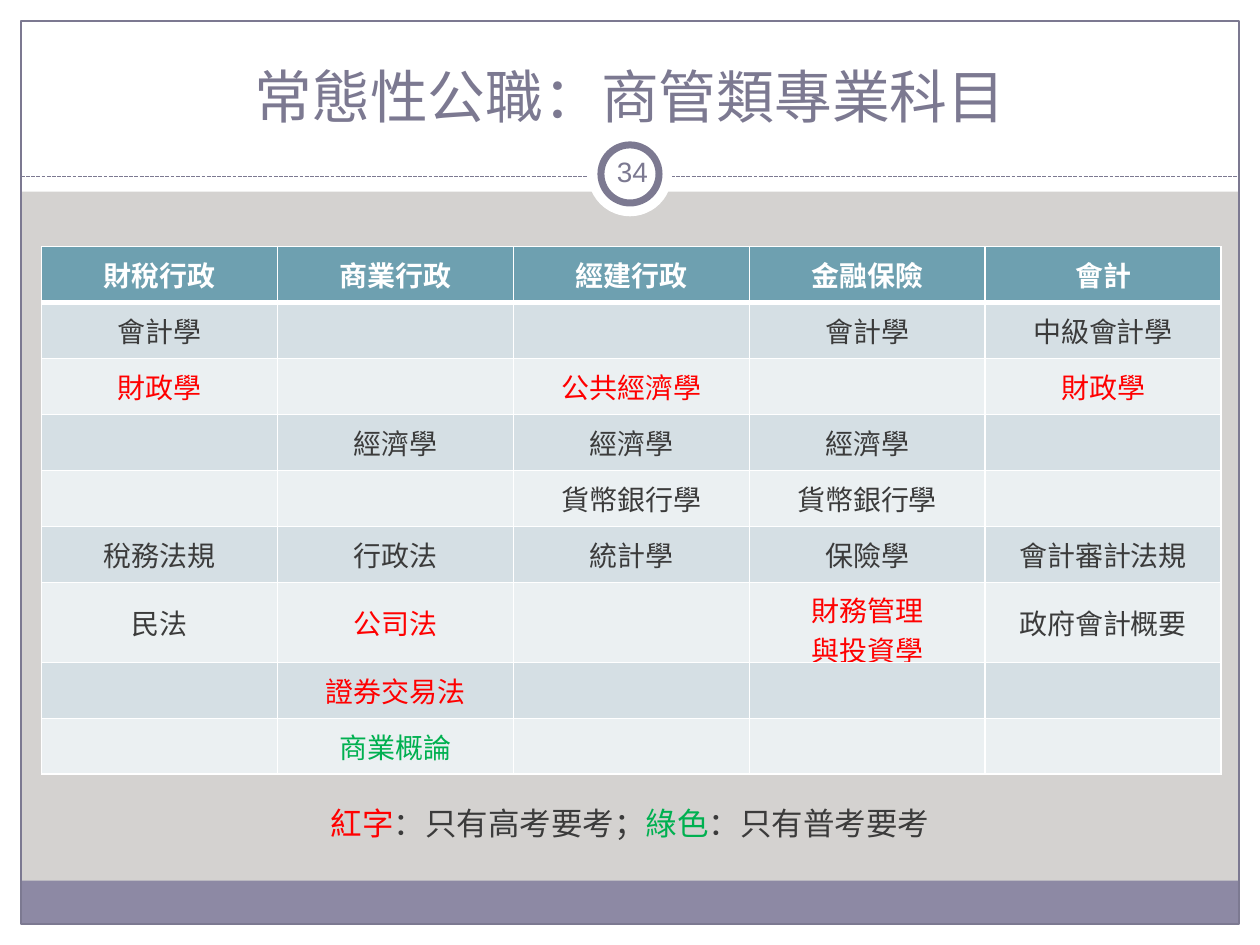
from lxml import etree
from pptx import Presentation
from pptx.dml.color import RGBColor
from pptx.enum.dml import MSO_LINE
from pptx.enum.shapes import MSO_CONNECTOR, MSO_SHAPE
from pptx.enum.text import MSO_ANCHOR, PP_ALIGN
from pptx.oxml.ns import qn
from pptx.util import Pt

RECT, OVAL = MSO_SHAPE.RECTANGLE, MSO_SHAPE.OVAL
LINE, DASH = MSO_CONNECTOR.STRAIGHT, MSO_LINE.SQUARE_DOT
TOP, MIDDLE, BOTTOM = MSO_ANCHOR.TOP, MSO_ANCHOR.MIDDLE, MSO_ANCHOR.BOTTOM
CENTER = PP_ALIGN.CENTER

WHITE = RGBColor(0xFF, 0xFF, 0xFF)
SAND = RGBColor(0xD4, 0xD2, 0xD0)
PURPLE = RGBColor(0x7C, 0x79, 0x91)
LILAC = RGBColor(0x8D, 0x89, 0xA4)
TEAL = RGBColor(0x6E, 0xA0, 0xB0)
MIST = RGBColor(0xD5, 0xDF, 0xE4)
PALE = RGBColor(0xEB, 0xF0, 0xF2)
GREY = RGBColor(0x3B, 0x3B, 0x3B)
RED = RGBColor(0xFF, 0x00, 0x00)
GREEN = RGBColor(0x00, 0xB0, 0x50)

FONT = "Arial"
WIDE, HIGH = 720, 540
EDGE = 12
RULE = 100.8
ROW, COL = 32, 134.8

ROWS = [
    ["財稅行政", "商業行政", "經建行政", "金融保險", "會計"],
    ["會計學", "", "", "會計學", "中級會計學"],
    ["財政學", "", "公共經濟學", "", "財政學"],
    ["", "經濟學", "經濟學", "經濟學", ""],
    ["", "", "貨幣銀行學", "貨幣銀行學", ""],
    ["稅務法規", "行政法", "統計學", "保險學", "會計審計法規"],
    ["民法", "公司法", "", "財務管理\n與投資學", "政府會計概要"],
    ["", "證券交易法", "", "", ""],
    ["", "商業概論", "", "", ""],
]
TINTS = {
    "財政學": RED,
    "公共經濟學": RED,
    "公司法": RED,
    "財務管理\n與投資學": RED,
    "證券交易法": RED,
    "商業概論": GREEN,
}
LEGEND = [
    ("紅字", RED),
    ("：只有高考要考；", GREY),
    ("綠色", GREEN),
    ("：只有普考要考", GREY),
]


def style(run, size, color, bold=False):
    font = run.font
    font.name = FONT
    font.size = Pt(size)
    font.bold = bold
    font.color.rgb = color


def add_block(slide, kind, box, fill=None, line=None, width=0.75):
    shape = slide.shapes.add_shape(kind, *map(Pt, box))
    shape.shadow.inherit = False
    if fill is None:
        shape.fill.background()
    else:
        shape.fill.solid()
        shape.fill.fore_color.rgb = fill
    if line is None:
        shape.line.fill.background()
    else:
        shape.line.color.rgb = line
        shape.line.width = Pt(width)


def add_rule(slide):
    rule = slide.shapes.add_connector(
        LINE, Pt(EDGE), Pt(RULE), Pt(WIDE - EDGE), Pt(RULE))
    rule.line.color.rgb = PURPLE
    rule.line.width = Pt(0.75)
    rule.line.dash_style = DASH
    etree.SubElement(rule._element.spPr, qn("a:effectLst"))


def add_text(slide, box, parts, size, anchor=TOP, wrap=True, inset=None):
    frame = slide.shapes.add_textbox(*map(Pt, box)).text_frame
    frame.word_wrap = wrap
    frame.vertical_anchor = anchor
    if inset is not None:
        frame.margin_left = frame.margin_right = Pt(inset)
        frame.margin_top = frame.margin_bottom = Pt(inset)
    para = frame.paragraphs[0]
    para.alignment = CENTER
    for text, color in parts:
        run = para.add_run()
        run.text = text
        style(run, size, color)


def add_border(cell, widths):
    props = cell._tc.get_or_add_tcPr()
    for spot, (side, width) in enumerate(widths.items()):
        line = etree.Element(qn("a:ln" + side), w=str(Pt(width)))
        fill = etree.SubElement(line, qn("a:solidFill"))
        etree.SubElement(fill, qn("a:srgbClr"), val=str(WHITE))
        props.insert(spot, line)


def fill_cell(cell, text, row):
    head = row == 0
    cell.fill.solid()
    cell.fill.fore_color.rgb = TEAL if head else (MIST if row % 2 else PALE)
    add_border(cell, {"L": 1, "R": 1, "T": 3 if row == 1 else 1,
                      "B": 3 if head else 1})
    cell.vertical_anchor = MIDDLE
    if not text:
        return
    cell.text_frame.text = text
    color = WHITE if head else TINTS.get(text, GREY)
    for para in cell.text_frame.paragraphs:
        para.alignment = CENTER
        for run in para.runs:
            style(run, 16, color, head)


def add_grid(slide):
    count = len(ROWS[0])
    table = slide.shapes.add_table(
        len(ROWS), count, Pt(23.8), Pt(141),
        Pt(COL * count), Pt(ROW * len(ROWS))).table
    for col in table.columns:
        col.width = Pt(COL)
    for r, words in enumerate(ROWS):
        table.rows[r].height = Pt(ROW)
        for c, text in enumerate(words):
            fill_cell(table.cell(r, c), text, r)


def add_frame(slide):
    inner = WIDE - 2 * EDGE
    for box in [
        (0, HIGH - EDGE, WIDE, EDGE),
        (0, 0, WIDE, 109.5),
        (0, 0, EDGE, HIGH),
        (WIDE - EDGE, 0, EDGE, HIGH),
    ]:
        add_block(slide, RECT, box, WHITE)
    add_block(slide, RECT, (EDGE, 503.2, inner, 24.5), LILAC)
    add_block(slide, RECT, (EDGE, EDGE, inner, HIGH - 2 * EDGE), line=PURPLE)
    add_rule(slide)
    add_block(slide, OVAL, (336, 75.6, 48, 48), WHITE)
    add_block(slide, OVAL, (343.4, 82.8, 33.2, 33.2), WHITE, PURPLE, 4)


def main():
    deck = Presentation()
    deck.slide_width, deck.slide_height = Pt(WIDE), Pt(HIGH)
    slide = deck.slides.add_slide(deck.slide_layouts[6])
    slide.background.fill.solid()
    slide.background.fill.fore_color.rgb = SAND
    add_frame(slide)
    add_text(slide, (24, 18, 672, 60),
             [("常態性公職：商管類專業科目", PURPLE)], 33, BOTTOM)
    add_grid(slide)
    add_text(slide, (180, 455.8, 360, 29), LEGEND, 18, wrap=False)
    add_text(slide, (343.4, 80.8, 36, 34.5), [("34", PURPLE)], 16, MIDDLE,
             inset=3.6)
    deck.save("out.pptx")


if __name__ == "__main__":
    main()
